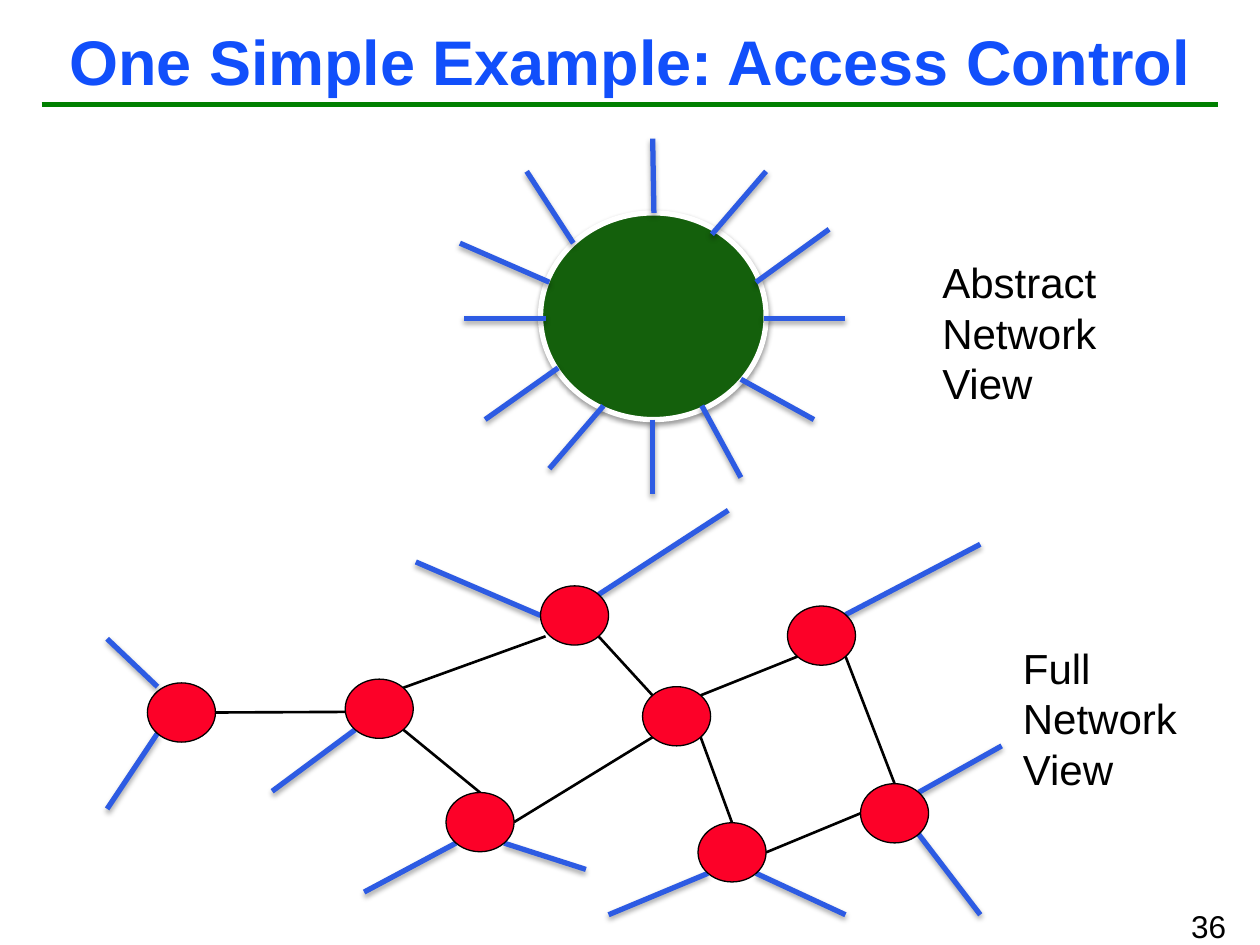
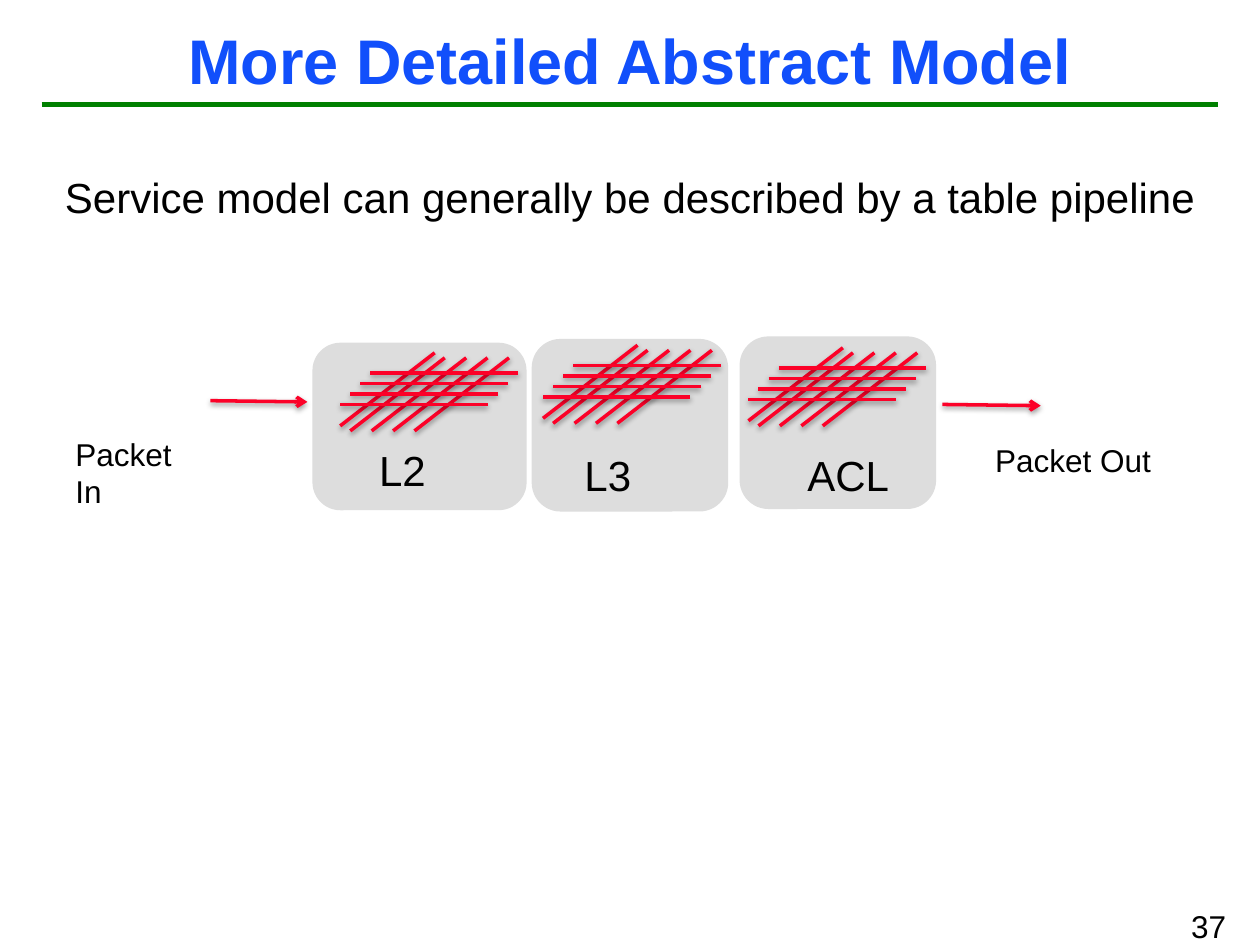
from dataclasses import dataclass
from typing import NamedTuple, Optional

import lxml.etree
import pptx
import pptx.dml.color
import pptx.enum.shapes
import pptx.enum.text
import pptx.oxml.ns
import pptx.util

Inches = pptx.util.Inches
Pt = pptx.util.Pt
qn = pptx.oxml.ns.qn
Align = pptx.enum.text.PP_ALIGN
Anchor = pptx.enum.text.MSO_ANCHOR
Preset = pptx.enum.shapes.MSO_SHAPE

FONT = "Arial"
BLACK, WHITE = "000000", "FFFFFF"
TITLE_BLUE, RULE_GREEN = "114FFB", "008000"
PORT_BLUE, RED = "2D5BE3", "FC0128"
HUB_GREEN, TABLE_GREY = "14600C", "DDDDDD"


class Point(NamedTuple):
    x: float
    y: float


class Box(NamedTuple):
    left: float
    top: float
    width: float
    height: float


class Shadow(NamedTuple):
    opacity: int
    distance: float


PORT_SHADOW = Shadow(35, 1.8)
SOFT_SHADOW = Shadow(38, 1.6)


class Stroke(NamedTuple):
    color: str
    width: float
    shadow: Optional[Shadow] = None
    arrow: bool = False


RULE = Stroke(RULE_GREEN, 2.5)
LINK = Stroke(BLACK, 1.5)
PORT = Stroke(PORT_BLUE, 3, PORT_SHADOW)
HATCH = Stroke(RED, 2, SOFT_SHADOW)
FLOW = Stroke(RED, 2, SOFT_SHADOW, arrow=True)


class Line(NamedTuple):
    start: Point
    end: Point


@dataclass(frozen=True)
class Label:
    text: str
    box: Box
    size: float = 24
    align: Align = Align.LEFT
    wrap: bool = True


@dataclass(frozen=True)
class Switch:
    left: float
    top: float
    width: float = 0.54
    height: float = 0.47

    def side(self, across: int, down: int) -> Point:
        """Point on the outline; across and down are -1, 0 or 1."""
        reach = 0.5 if across * down == 0 else 0.354
        return Point(self.left + self.width * (0.5 + across * reach),
                     self.top + self.height * (0.5 + down * reach))


@dataclass(frozen=True)
class PipelineTable:
    name: str
    box: Box
    hatch: Point
    label_box: Box


WEST = Switch(1.17, 5.42)
MID_WEST = Switch(2.74, 5.39)
NORTH = Switch(4.29, 4.65)
CENTER = Switch(5.1, 5.45)
SOUTH_WEST = Switch(3.54, 6.29)
SOUTH = Switch(5.54, 6.53)
NORTH_EAST = Switch(6.25, 4.81)
EAST = Switch(6.83, 6.22)
SWITCHES = [WEST, NORTH, CENTER, SOUTH_WEST, MID_WEST, SOUTH, NORTH_EAST, EAST]

LINKS = [
    Line(WEST.side(1, 0), Point(2.74, 5.65)),
    Line(MID_WEST.side(1, -1), Point(4.33, 5.05)),
    Line(MID_WEST.side(1, 1), SOUTH_WEST.side(0, -1)),
    Line(NORTH.side(1, 1), CENTER.side(-1, -1)),
    Line(SOUTH_WEST.side(1, 0), CENTER.side(-1, 1)),
    Line(CENTER.side(1, -1), NORTH_EAST.side(-1, 1)),
    Line(CENTER.side(1, 1), SOUTH.side(0, -1)),
    Line(SOUTH.side(1, 0), EAST.side(-1, 0)),
    Line(NORTH_EAST.side(1, 1), EAST.side(0, -1)),
]
SWITCH_PORTS = [
    Line(Point(1.25, 5.45), Point(0.85, 5.07)),
    Line(WEST.side(-1, 1), Point(0.85, 6.42)),
    Line(MID_WEST.side(-1, 1), Point(2.16, 6.28)),
    Line(NORTH.side(-1, 0), Point(3.3, 4.46)),
    Line(NORTH.side(1, -1), Point(5.78, 4.05)),
    Line(SOUTH_WEST.side(-1, 1), Point(2.89, 7.08)),
    Line(SOUTH_WEST.side(1, 1), Point(4.65, 6.9)),
    Line(SOUTH.side(-1, 1), Point(4.83, 7.26)),
    Line(SOUTH.side(1, 1), Point(6.71, 7.26)),
    Line(NORTH_EAST.side(1, -1), Point(7.78, 4.32)),
    Line(EAST.side(1, -1), Point(7.95, 5.92)),
    Line(EAST.side(1, 1), Point(7.78, 7.26)),
]
HUB_BOX = Box(4.29, 1.69, 1.79, 1.64)
HUB_PORTS = [
    Line(Point(5.19, 1.69), Point(5.18, 1.1)),
    Line(Point(5.65, 1.86), Point(6.08, 1.36)),
    Line(Point(6, 2.24), Point(6.58, 1.82)),
    Line(Point(6.06, 2.53), Point(6.71, 2.53)),
    Line(Point(5.88, 3.01), Point(6.46, 3.33)),
    Line(Point(5.57, 3.22), Point(5.88, 3.79)),
    Line(Point(5.18, 3.33), Point(5.18, 3.92)),
    Line(Point(4.79, 3.22), Point(4.36, 3.72)),
    Line(Point(4.43, 2.92), Point(3.85, 3.33)),
    Line(Point(4.33, 2.53), Point(3.68, 2.53)),
    Line(Point(4.36, 2.24), Point(3.65, 1.93)),
    Line(Point(4.55, 1.93), Point(4.18, 1.36)),
]
VIEW_LABELS = [
    Label("Abstract Network\nView", Box(7.38, 1.99, 2.25, 1.31)),
    Label("Full Network View", Box(8.02, 5.05, 1.84, 1.31)),
]

PIPELINE = [
    PipelineTable("L2", Box(2.48, 2.72, 1.7, 1.33), Point(2.7, 2.8), Box(2.91, 3.48, 0.58, 0.5)),
    PipelineTable("L3", Box(4.22, 2.69, 1.56, 1.37), Point(4.31, 2.74), Box(4.54, 3.52, 0.58, 0.5)),
    PipelineTable("ACL", Box(5.87, 2.67, 1.56, 1.37), Point(5.94, 2.76), Box(6.31, 3.52, 0.86, 0.5)),
]
FLOWS = [
    Line(Point(1.67, 3.18), Point(2.44, 3.19)),
    Line(Point(7.48, 3.21), Point(8.26, 3.22)),
]
PIPELINE_LABELS = [
    Label("Packet In", Box(0.5, 3.4, 1.13, 0.7), 18),
    Label("Packet Out", Box(7.8, 3.45, 1.45, 0.4), 18, wrap=False),
    Label("Service model can generally be described by a table pipeline",
          Box(0, 1.31, 10, 0.5), align=Align.CENTER),
]


def rgb(color: str) -> pptx.dml.color.RGBColor:
    return pptx.dml.color.RGBColor.from_string(color)


def place(box: Box) -> list:
    return [Inches(length) for length in box]


def set_shadow(shape, shadow: Optional[Shadow]) -> None:
    """Give the shape this shadow only; call after fill and line are set."""
    effects = lxml.etree.SubElement(shape._element.spPr, qn("a:effectLst"))
    if shadow is None:
        return
    outer = lxml.etree.SubElement(effects, qn("a:outerShdw"), {
        "blurRad": str(Pt(3.1)), "dist": str(Pt(shadow.distance)),
        "dir": "5400000", "rotWithShape": "0"})
    color = lxml.etree.SubElement(outer, qn("a:srgbClr"), val=BLACK)
    lxml.etree.SubElement(color, qn("a:alpha"), val=str(shadow.opacity * 1000))


def draw_line(slide, line: Line, stroke: Stroke) -> None:
    ends = [Inches(length) for length in (*line.start, *line.end)]
    connector = slide.shapes.add_connector(pptx.enum.shapes.MSO_CONNECTOR.STRAIGHT, *ends)
    connector.line.color.rgb = rgb(stroke.color)
    connector.line.width = Pt(stroke.width)
    if stroke.arrow:
        outline = connector._element.spPr.find(qn("a:ln"))
        lxml.etree.SubElement(outline, qn("a:tailEnd"), type="arrow")
    set_shadow(connector, stroke.shadow)


def draw_lines(slide, lines: list[Line], stroke: Stroke) -> None:
    for line in lines:
        draw_line(slide, line, stroke)


def draw_shape(slide, preset: Preset, box: Box, fill: str, outline: Optional[Stroke] = None) -> None:
    shape = slide.shapes.add_shape(preset, *place(box))
    shape.fill.solid()
    shape.fill.fore_color.rgb = rgb(fill)
    if outline is None:
        shape.line.fill.background()
    else:
        shape.line.color.rgb = rgb(outline.color)
        shape.line.width = Pt(outline.width)
    set_shadow(shape, outline.shadow if outline else None)


def format_text(frame, color: str, size: float, align: Align, bold: bool = False) -> None:
    formats = {"name": FONT, "size": Pt(size), "bold": bold}
    for paragraph in frame.paragraphs:
        paragraph.alignment = align
        for run in paragraph.runs:
            run.font.color.rgb = rgb(color)
            for name, value in formats.items():
                setattr(run.font, name, value)


def draw_label(slide, label: Label) -> None:
    frame = slide.shapes.add_textbox(*place(label.box)).text_frame
    frame.word_wrap = label.wrap
    frame.text = label.text
    format_text(frame, BLACK, label.size, label.align)


def add_slide(presentation, title: str, number: int, anchor: Anchor):
    """Add a slide with its title, green rule and page number."""
    slide = presentation.slides.add_slide(presentation.slide_layouts[5])
    heading = slide.shapes.title
    heading.left, heading.top, heading.width, heading.height = place(Box(0, 0.17, 10, 0.67))
    frame = heading.text_frame
    frame.text = title
    frame.auto_size = pptx.enum.text.MSO_AUTO_SIZE.NONE
    frame.vertical_anchor = anchor
    frame.paragraphs[0].line_spacing = 0.9
    format_text(frame, TITLE_BLUE, 36, Align.CENTER, bold=True)
    draw_line(slide, Line(Point(0.33, 0.83), Point(9.67, 0.83)), RULE)
    draw_label(slide, Label(str(number), Box(9.08, 7.15, 0.75, 0.4), 18, Align.RIGHT))
    return slide


def hatch_lines(origin: Point) -> list[Line]:
    """Slanted grid of five diagonals and four rows that stands for a table."""
    x, y = origin
    starts = [Point(x, y + 0.58)]
    starts += [Point(x + 0.08 + 0.17 * column, y + 0.62) for column in range(4)]
    diagonals = [Line(start, Point(start.x + 0.75, start.y - 0.58)) for start in starts]
    rows = []
    for row in range(4):
        start = Point(x + 0.08 * (3 - row), y + 0.16 + 0.083 * row)
        rows.append(Line(start, Point(start.x + 1.17, start.y)))
    return diagonals + rows


def build_access_control(presentation) -> None:
    slide = add_slide(presentation, "One Simple Example: Access Control", 36, Anchor.BOTTOM)
    draw_lines(slide, LINKS, LINK)
    draw_lines(slide, SWITCH_PORTS, PORT)
    for switch in SWITCHES:
        box = Box(switch.left, switch.top, switch.width, switch.height)
        draw_shape(slide, Preset.OVAL, box, RED, Stroke(BLACK, 0.75))
    draw_shape(slide, Preset.OVAL, HUB_BOX, HUB_GREEN, Stroke(WHITE, 3, SOFT_SHADOW))
    draw_lines(slide, HUB_PORTS, PORT)
    for label in VIEW_LABELS:
        draw_label(slide, label)


def build_abstract_model(presentation) -> None:
    slide = add_slide(presentation, "More Detailed Abstract Model", 37, Anchor.MIDDLE)
    for table in PIPELINE:
        draw_shape(slide, Preset.ROUNDED_RECTANGLE, table.box, TABLE_GREY)
        draw_lines(slide, hatch_lines(table.hatch), HATCH)
        draw_label(slide, Label(table.name, table.label_box, wrap=False))
    draw_lines(slide, FLOWS, FLOW)
    for label in PIPELINE_LABELS:
        draw_label(slide, label)


def main() -> None:
    presentation = pptx.Presentation()
    presentation.slide_width, presentation.slide_height = Inches(10), Inches(7.5)
    build_access_control(presentation)
    build_abstract_model(presentation)
    presentation.save("out.pptx")


if __name__ == "__main__":
    main()
